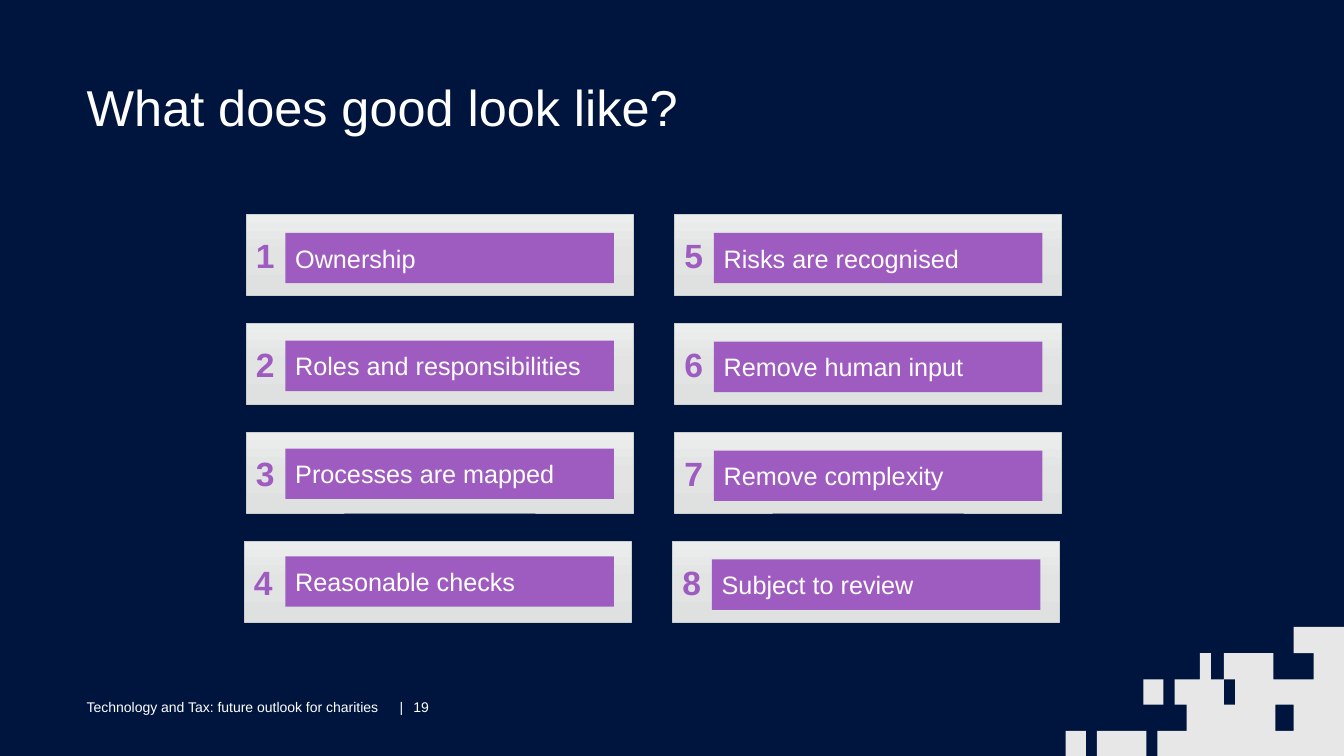
"""Builds the slide of eight numbered signs of good practice."""
from copy import deepcopy

from pptx import Presentation
from pptx.dml.color import RGBColor
from pptx.enum.shapes import MSO_SHAPE
from pptx.enum.text import MSO_ANCHOR, MSO_AUTO_SIZE, PP_ALIGN
from pptx.oxml.ns import qn
from pptx.util import Inches, Pt

NAVY = RGBColor(0x00, 0x15, 0x3D)
WHITE = RGBColor(0xFF, 0xFF, 0xFF)
PURPLE = RGBColor(0x9F, 0x5C, 0xC0)
PIXEL_GREY = RGBColor(0xE7, 0xE7, 0xE8)
CARD_EDGE = RGBColor(0xCC, 0xCF, 0xCF)
CARD_STOPS = (
    (0, RGBColor(0xEC, 0xED, 0xED)),
    (0.5, RGBColor(0xE2, 0xE4, 0xE4)),
    (1, RGBColor(0xDF, 0xE1, 0xE1)),
)


def write(shape, text, size, color=WHITE, bold=False, align=PP_ALIGN.LEFT,
          anchor=MSO_ANCHOR.MIDDLE, inset=0.1, wrap=True):
    frame = shape.text_frame
    frame.auto_size = MSO_AUTO_SIZE.NONE
    frame.word_wrap = wrap
    frame.vertical_anchor = anchor
    frame.margin_left = frame.margin_right = Inches(inset)
    frame.margin_top = frame.margin_bottom = Inches(inset / 2)
    para = frame.paragraphs[0]
    para.alignment = align
    span = para.add_run()
    span.text = text
    span.font.name = "Arial"
    span.font.size = Pt(size)
    span.font.bold = bold
    span.font.color.rgb = color


def add_box(left, top, width, height):
    box = slide.shapes.add_shape(
        MSO_SHAPE.RECTANGLE, Inches(left), Inches(top), Inches(width), Inches(height))
    box.shadow.inherit = False
    return box


deck = Presentation()
deck.slide_width, deck.slide_height = Inches(13.33), Inches(7.5)
slide = deck.slides.add_slide(deck.slide_layouts[5])
slide.background.fill.solid()
slide.background.fill.fore_color.rgb = NAVY

pixel_outlines = (
    ((1088, 725), (1137, 725), (1137, 750), (1088, 750)),
    ((1057, 725), (1077, 725), (1077, 750), (1057, 750)),
    ((1265, 699), (1265, 725), (1283, 725), (1283, 699)),
    ((1134, 674), (1154, 674), (1154, 699), (1134, 699)),
    ((1214, 674), (1214, 699), (1225, 699), (1225, 674)),
    ((1283, 622), (1333, 622), (1333, 750), (1148, 750), (1148, 725),
     (1177, 725), (1177, 699), (1165, 699), (1165, 674), (1190, 674),
     (1190, 648), (1201, 648), (1201, 674), (1214, 674), (1214, 648),
     (1263, 648), (1263, 674), (1303, 674), (1303, 648), (1283, 648)),
)
builder = slide.shapes.build_freeform(*pixel_outlines[0][0], scale=Inches(0.01))
for outline in pixel_outlines:
    builder.move_to(*outline[0])
    builder.add_line_segments(outline[1:], close=True)
pixels = builder.convert_to_shape()
pixels.shadow.inherit = False
pixels.fill.solid()
pixels.fill.fore_color.rgb = PIXEL_GREY
pixels.line.fill.background()

title = slide.shapes.title
title.left, title.top = Inches(0.86), Inches(0.76)
title.width, title.height = Inches(7.68), Inches(0.61)
write(title, "What does good look like?", 36, anchor=MSO_ANCHOR.TOP, inset=0)

footer = (
    (0.86, 3.08, "Technology and Tax: future outlook for charities", PP_ALIGN.LEFT),
    (3.94, 0.06, "|", PP_ALIGN.RIGHT),
    (4.1, 0.17, "19", PP_ALIGN.LEFT),
)
for left, width, text, align in footer:
    box = slide.shapes.add_textbox(Inches(left), Inches(6.93), Inches(width), Inches(0.17))
    write(box, text, 10, align=align, anchor=MSO_ANCHOR.TOP, inset=0, wrap=False)

FIRST_CARD_TOP, CARD_PITCH, FIRST_BAR_TOP = 2.13, 1.08, 2.31
LAST_ROW_SHIFT = 0.02
columns = (
    (2.44, 2.83, 1.07, 0, ("Ownership", "Roles and responsibilities",
                           "Processes are mapped", "Reasonable checks")),
    (6.69, 7.08, 1.08, LAST_ROW_SHIFT, ("Risks are recognised", "Remove human input",
                                        "Remove complexity", "Subject to review")),
)
number = 0
for card_left, bar_left, bar_pitch, bar_shift, labels in columns:
    for row, label in enumerate(labels):
        number += 1
        last = row == len(labels) - 1
        card = add_box(card_left - LAST_ROW_SHIFT * last,
                       FIRST_CARD_TOP + row * CARD_PITCH, 3.84, 0.8)
        card.fill.gradient()
        card.fill.gradient_angle = 270
        stop_list = card.element.spPr.find(".//" + qn("a:gsLst"))
        stop_list.insert(1, deepcopy(stop_list[0]))
        for stop, (position, color) in zip(card.fill.gradient_stops, CARD_STOPS):
            stop.position = position
            stop.color.rgb = color
        card.line.color.rgb = CARD_EDGE
        card.line.width = Pt(0.5)
        write(card, str(number), 24, color=PURPLE, bold=True)

        bar = add_box(bar_left - bar_shift * last,
                      FIRST_BAR_TOP + row * bar_pitch, 3.26, 0.5)
        bar.fill.solid()
        bar.fill.fore_color.rgb = PURPLE
        bar.line.fill.background()
        write(bar, label, 18)

deck.save("out.pptx")
